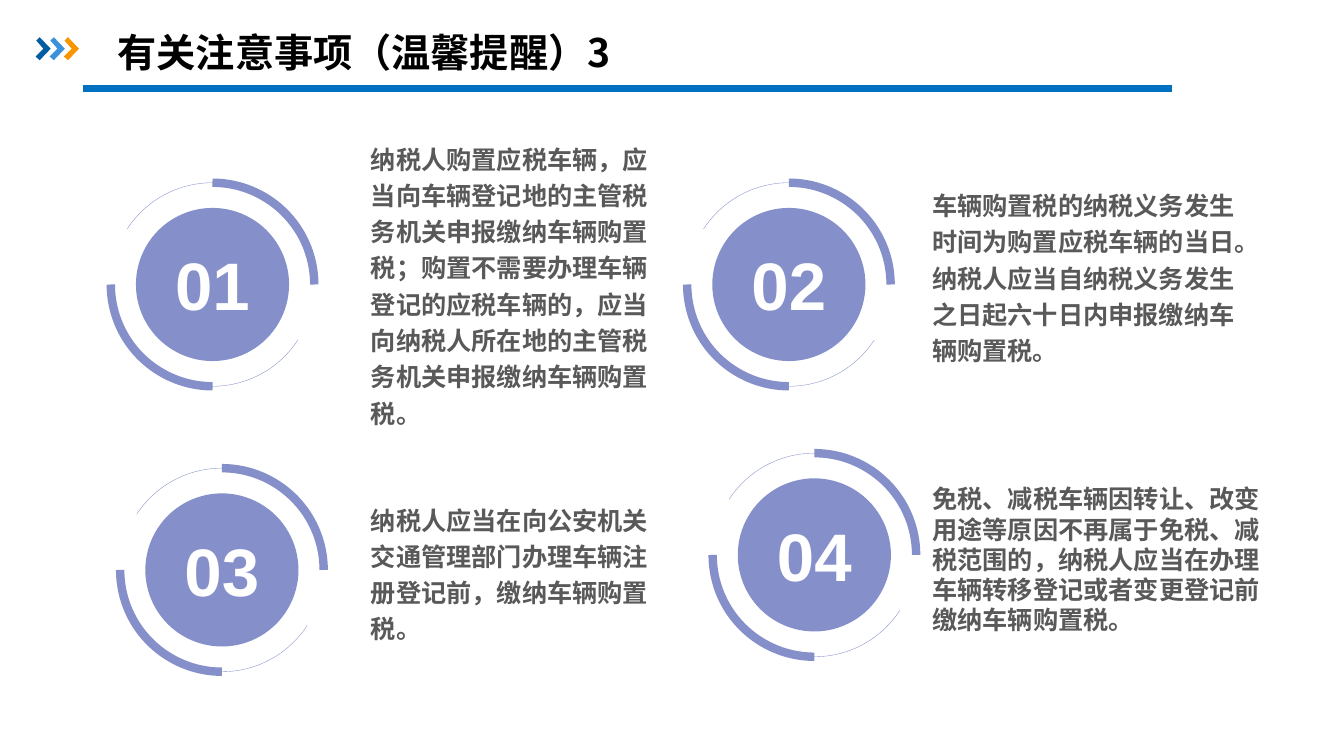
from dataclasses import dataclass

from lxml import etree
from pptx import Presentation
from pptx.dml.color import RGBColor
from pptx.enum.shapes import MSO_CONNECTOR, MSO_SHAPE
from pptx.enum.text import MSO_AUTO_SIZE, PP_ALIGN
from pptx.oxml.ns import qn
from pptx.util import Pt

ARC = MSO_SHAPE.ARC
OVAL = MSO_SHAPE.OVAL
STRAIGHT = MSO_CONNECTOR.STRAIGHT
GROW = MSO_AUTO_SIZE.SHAPE_TO_FIT_TEXT
LEFT = PP_ALIGN.LEFT
CENTER = PP_ALIGN.CENTER


@dataclass(frozen=True)
class Theme:
    text_font: str = "Noto Sans CJK SC"
    number_font: str = "Arial"
    title_size: float = 28
    number_size: float = 48
    body_size: float = 18
    title: str = "000000"
    number: str = "FFFFFF"
    body: str = "595959"
    rule: str = "0070C0"
    badge: str = "8590CA"
    chevrons: tuple = ("005DA2", "3992DB", "F79600")


class SlideBuilder:
    """Draws styled elements on one slide; all lengths are in points."""

    def __init__(self, slide, theme):
        self.shapes = slide.shapes
        self.theme = theme

    def rule(self, x1, x2, y, width):
        line = self.shapes.add_connector(STRAIGHT, Pt(x1), Pt(y), Pt(x2), Pt(y))
        line.line.color.rgb = RGBColor.from_string(self.theme.rule)
        line.line.width = Pt(width)
        etree.SubElement(line._element.spPr, qn("a:effectLst"))

    def fill(self, shape, color):
        shape.shadow.inherit = False
        shape.fill.solid()
        shape.fill.fore_color.rgb = RGBColor.from_string(color)
        shape.line.fill.background()

    def chevrons(self, left, top, step):
        outline = [(0.5, 2.4), (3, 0), (10.8, 8.2), (3, 16.4), (0, 13.8), (5.6, 8.2)]
        group = self.shapes.add_group_shape()
        for i, color in enumerate(self.theme.chevrons):
            points = [(Pt(left + i * step + x), Pt(top + y)) for x, y in outline]
            builder = group.shapes.build_freeform(*points[0])
            builder.add_line_segments(points[1:], close=True)
            self.fill(builder.convert_to_shape(), color)

    def arc(self, shapes, cx, cy, diameter, width, rotation, start=None):
        r = diameter / 2
        arc = shapes.add_shape(ARC, Pt(cx - r), Pt(cy - r), Pt(diameter), Pt(diameter))
        arc.shadow.inherit = False
        arc.fill.background()
        arc.line.color.rgb = RGBColor.from_string(self.theme.badge)
        arc.line.width = Pt(width)
        arc.rotation = rotation
        if start is not None:
            arc.adjustments[0] = start
            arc.adjustments[1] = 0

    def text(self, shapes, box, words, font, size, color,
             align=LEFT, spacing=None, wrap=True):
        frame = shapes.add_textbox(*(Pt(v) for v in box)).text_frame
        frame.word_wrap = wrap
        frame.auto_size = GROW
        paragraph = frame.paragraphs[0]
        paragraph.alignment = align
        if spacing:
            paragraph.line_spacing = spacing
        run = paragraph.add_run()
        run.text = words
        run.font.size = Pt(size)
        run.font.bold = True
        run.font.color.rgb = RGBColor.from_string(color)
        run.font.name = font
        east_asian = etree.SubElement(run._r.get_or_add_rPr(), qn("a:ea"))
        east_asian.set("typeface", font)

    def title(self, box, words):
        t = self.theme
        self.text(self.shapes, box, words, t.text_font, t.title_size, t.title)

    def body(self, box, words, spacing):
        t = self.theme
        self.text(self.shapes, box, words, t.text_font, t.body_size, t.body,
                  spacing=spacing)

    def badge(self, cx, cy, number):
        t = self.theme
        ring, disc = 145.4, 109.4
        shapes = self.shapes.add_group_shape().shapes
        core = shapes.add_shape(OVAL, Pt(cx - disc / 2), Pt(cy - disc / 2),
                                Pt(disc), Pt(disc))
        self.fill(core, t.badge)
        # Thick quarter arcs, then thin longer arcs, each on opposite sides
        for width, start in ((6, None), (0.25, 127.87)):
            for rotation in (0, 180):
                self.arc(shapes, cx, cy, ring, width, rotation, start)
        self.text(shapes, (cx - 33.9, cy - 32.7, 67.8, 65.4), number,
                  t.number_font, t.number_size, t.number, CENTER, wrap=False)


def main():
    deck = Presentation()
    deck.slide_width, deck.slide_height = Pt(960), Pt(540)
    page = SlideBuilder(deck.slides.add_slide(deck.slide_layouts[6]), Theme())

    # Header
    page.rule(59.5, 837.5, 63.4, 5)
    page.chevrons(25.4, 26.6, 10.1)
    page.title((77, 16.6, 424.8, 41), "有关注意事项（温馨提醒）3")

    # Reminders: badge centre, text box, line spacing, wording
    reminders = [
        ((151.8, 203.2), (257.8, 95, 213.9, 216.7), 1.2,
         "纳税人购置应税车辆，应当向车辆登记地的主管税务机关申报缴纳车辆购置税；"
         "购置不需要办理车辆登记的应税车辆的，应当向纳税人所在地的主管税务机关"
         "申报缴纳车辆购置税。"),
        ((563.5, 203.2), (658.8, 128.2, 233.3, 138.2), 1.2,
         "车辆购置税的纳税义务发生时间为购置应税车辆的当日。"
         "纳税人应当自纳税义务发生之日起六十日内申报缴纳车辆购置税。"),
        ((158.5, 407.1), (257.8, 352.8, 213.9, 111.6), 1.2,
         "纳税人应当在向公安机关交通管理部门办理车辆注册登记前，缴纳车辆购置税。"),
        ((581.7, 396.4), (658.8, 342, 255.6, 115.9), None,
         "免税、减税车辆因转让、改变用途等原因不再属于免税、减税范围的，"
         "纳税人应当在办理车辆转移登记或者变更登记前缴纳车辆购置税。"),
    ]
    for index, (centre, box, spacing, words) in enumerate(reminders, start=1):
        page.badge(*centre, f"{index:02d}")
        page.body(box, words, spacing)

    deck.save("out.pptx")


if __name__ == "__main__":
    main()
